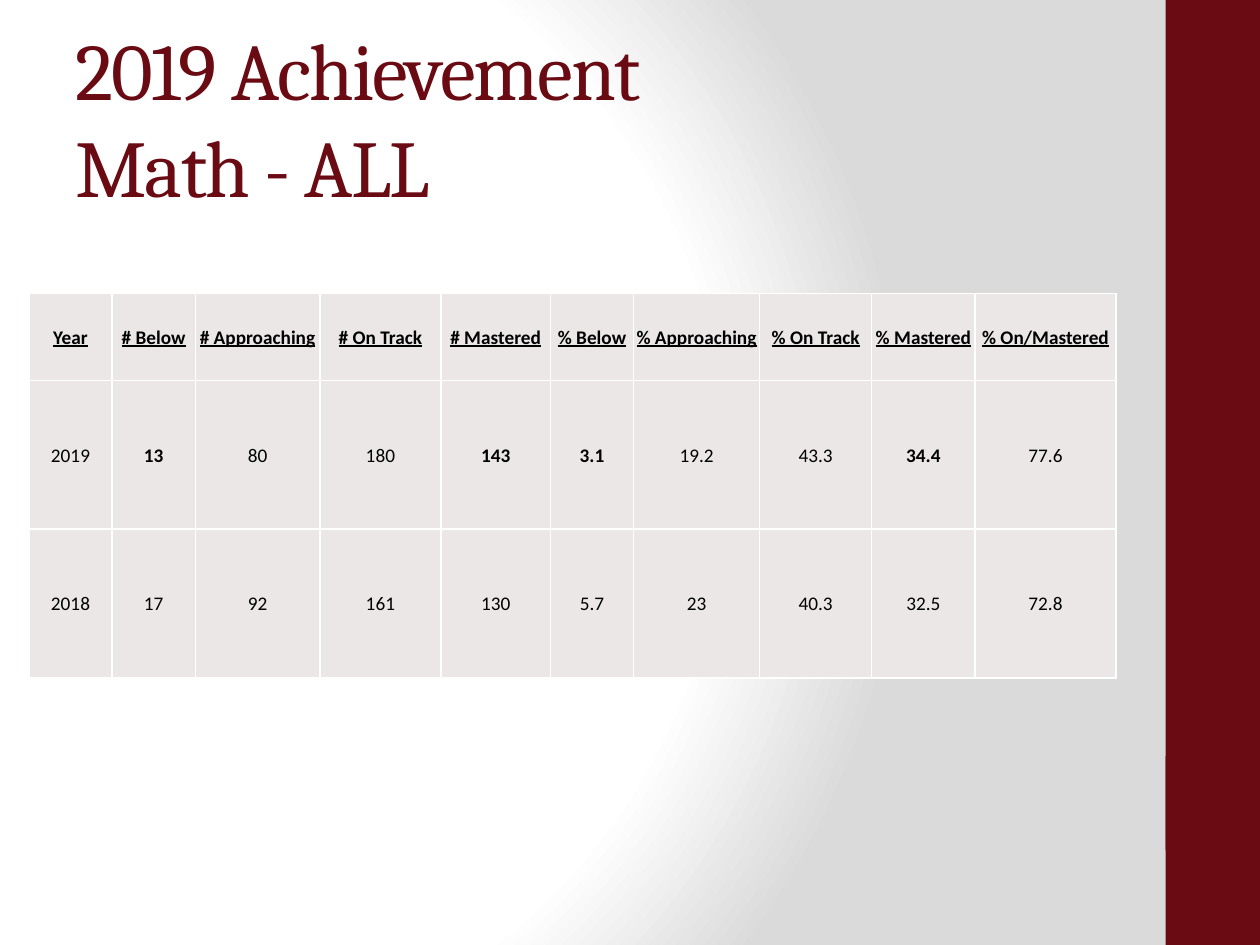
import pptx
import pptx.dml.color
import pptx.enum.shapes
import pptx.enum.text
import pptx.oxml
import pptx.oxml.ns
import pptx.util
from pptx.util import Inches

MAROON = pptx.dml.color.RGBColor(0x6A, 0x0A, 0x12)
CELL_GREY = pptx.dml.color.RGBColor(0xEB, 0xE7, 0xE7)
BLACK = pptx.dml.color.RGBColor(0, 0, 0)
WHITE = pptx.dml.color.RGBColor(0xFF, 0xFF, 0xFF)
EDGE_GREY = pptx.dml.color.RGBColor(0xDA, 0xDA, 0xDA)

COLUMN_WIDTHS = [0.66, 0.66, 0.99, 0.96, 0.87, 0.66, 1, 0.89, 0.82, 1.12]
ROW_HEIGHTS = [0.69, 1.18, 1.18]
LEVELS = ["Below", "Approaching", "On Track", "Mastered"]
HEADINGS = ["Year", *[f"{unit} {level}" for unit in "#%" for level in LEVELS],
            "% On/Mastered"]
RESULTS = [
    HEADINGS,
    ["2019", "13", "80", "180", "143", "3.1", "19.2", "43.3", "34.4", "77.6"],
    ["2018", "17", "92", "161", "130", "5.7", "23", "40.3", "32.5", "72.8"],
]
HIGHLIGHTS = {(1, HEADINGS.index(heading))
              for heading in ("# Below", "# Mastered", "% Below", "% Mastered")}


def paint_background(slide):
    stops = "".join(
        f'<a:gs pos="{position * 1000}"><a:srgbClr val="{color}"/></a:gs>'
        for position, color in [(0, WHITE), (75, WHITE), (100, EDGE_GREY)])
    background = pptx.oxml.parse_xml(
        f'<p:bg {pptx.oxml.ns.nsdecls("p", "a")}><p:bgPr>'
        f'<a:gradFill rotWithShape="1"><a:gsLst>{stops}</a:gsLst>'
        '<a:path path="circle">'
        '<a:fillToRect l="20000" t="50000" r="100000" b="50000"/>'
        '</a:path></a:gradFill><a:effectLst/></p:bgPr></p:bg>')
    slide.element.cSld.insert(0, background)


def add_band(slide, top, height):
    band = slide.shapes.add_shape(
        pptx.enum.shapes.MSO_SHAPE.RECTANGLE,
        Inches(9.25), Inches(top), Inches(0.75), Inches(height))
    band.shadow.inherit = False
    band.fill.solid()
    band.fill.fore_color.rgb = MAROON
    band.line.fill.background()


def add_title(slide, text):
    title = slide.shapes.add_textbox(
        Inches(0.5), Inches(0.3), Inches(8.33), Inches(1.25))
    frame = title.text_frame
    frame.word_wrap = True
    frame.vertical_anchor = pptx.enum.text.MSO_ANCHOR.MIDDLE
    heading = frame.paragraphs[0]
    heading.text = text
    heading.font.name = "Cambria"
    heading.font.size = pptx.util.Pt(46)
    heading.font.color.rgb = MAROON
    for run in heading.runs:
        run.font._element.set("spc", "-100")


def add_borders(cell):
    properties = cell._tc.get_or_add_tcPr()
    for side in ("lnL", "lnR", "lnT", "lnB"):
        properties.append(pptx.oxml.parse_xml(
            f'<a:{side} {pptx.oxml.ns.nsdecls("a")} w="12700"><a:solidFill>'
            f'<a:srgbClr val="{WHITE}"/></a:solidFill></a:{side}>'))


def fill_cell(cell, text, bold, underline):
    cell.margin_left = cell.margin_right = cell.margin_top = Inches(0.01)
    cell.margin_bottom = 0
    cell.vertical_anchor = pptx.enum.text.MSO_ANCHOR.MIDDLE
    add_borders(cell)
    cell.fill.solid()
    cell.fill.fore_color.rgb = CELL_GREY
    entry = cell.text_frame.paragraphs[0]
    entry.text = text
    entry.alignment = pptx.enum.text.PP_ALIGN.CENTER
    entry.font.name = "Calibri"
    entry.font.size = pptx.util.Pt(11)
    entry.font.color.rgb = BLACK
    entry.font.bold = bold
    entry.font.underline = underline


def add_results(slide):
    table = slide.shapes.add_table(
        len(RESULTS), len(HEADINGS), Inches(0.23), Inches(2.33),
        Inches(sum(COLUMN_WIDTHS)), Inches(sum(ROW_HEIGHTS))).table
    for column, width in zip(table.columns, COLUMN_WIDTHS):
        column.width = Inches(width)
    for row, height in zip(table.rows, ROW_HEIGHTS):
        row.height = Inches(height)
    for row_index, values in enumerate(RESULTS):
        is_heading = row_index == 0
        for column_index, value in enumerate(values):
            position = (row_index, column_index)
            fill_cell(table.cell(*position), value,
                      is_heading or position in HIGHLIGHTS, is_heading)


def main():
    presentation = pptx.Presentation()
    presentation.slide_width = Inches(10)
    presentation.slide_height = Inches(7.5)
    slide = presentation.slides.add_slide(presentation.slide_layouts[6])
    paint_background(slide)
    add_band(slide, 0, 7.5)
    add_band(slide, 6, 0.75)
    add_title(slide, "2019 Achievement \vMath - ALL")
    add_results(slide)
    presentation.save("out.pptx")


if __name__ == "__main__":
    main()
